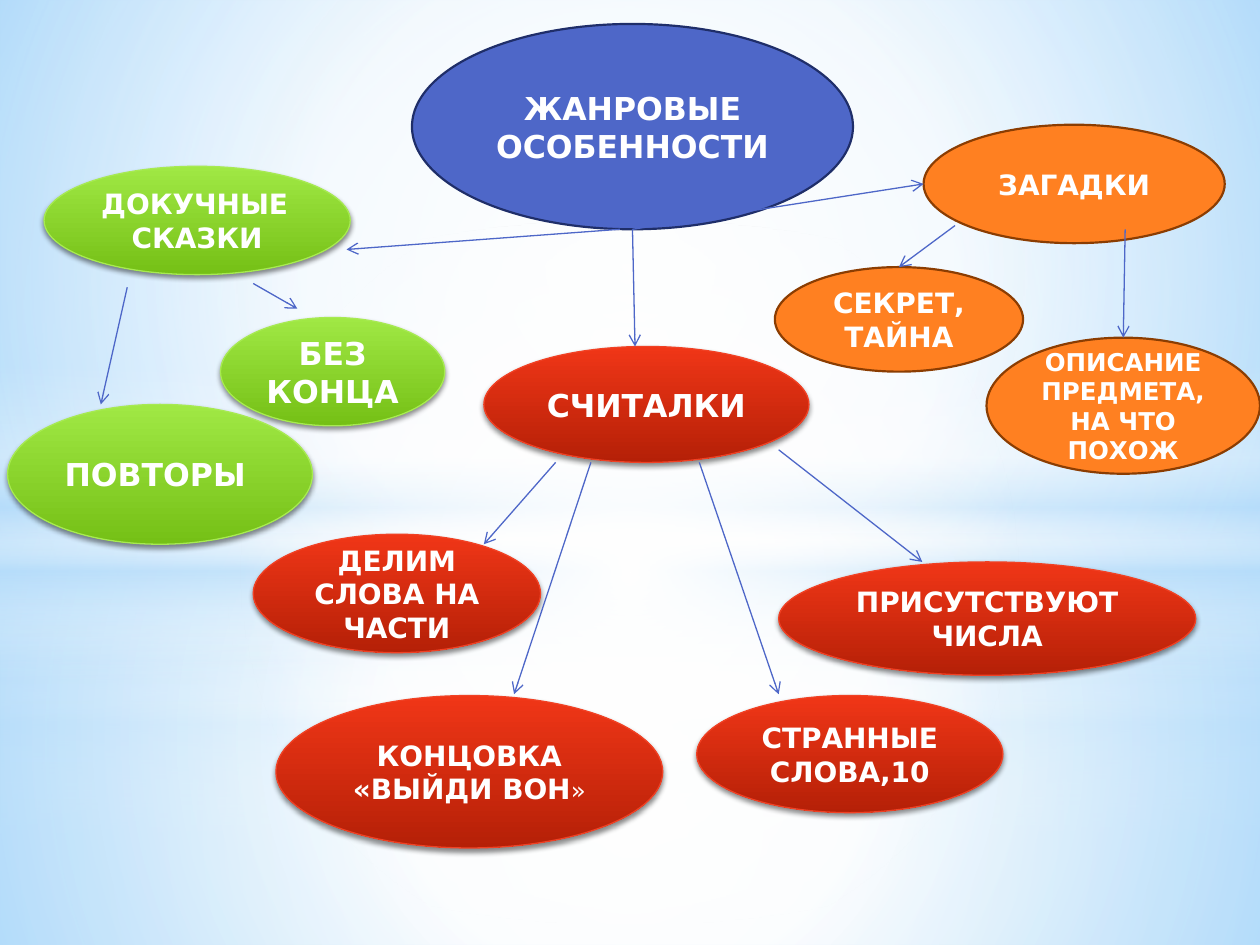
from lxml import etree
from pptx import Presentation
from pptx.dml.color import RGBColor
from pptx.enum.shapes import MSO_CONNECTOR as Conn, MSO_SHAPE as Geo
from pptx.enum.text import MSO_ANCHOR as Anchor, PP_ALIGN as Align
from pptx.oxml.ns import qn
from pptx.util import Inches, Pt

FONT = "DejaVu Sans"
BLUE, SKY, WHITE = "4E67C8", "B4DCFA", "FFFFFF"
LOOK = {
    "blue": (BLUE, "1F2E69"),
    "orange": ("FF8021", "8B3D02"),
    "red": (("F03617", "B52007"), "F14124"),
    "green": (("A0E844", "75C016"), "A7EA52"),
}


def color(code):
    """Turn a hex string into a colour."""
    return RGBColor.from_string(code)


def add(root, tag, **attrs):
    """Add a drawing element with its attributes."""
    return etree.SubElement(root, qn("a:" + tag), {k: str(v) for k, v in attrs.items()})


def blend(shape, stops, round_=False):
    """Fill a shape with (place, colour, opacity) stops, round or downward."""
    shape.fill.background()
    old = shape.element.spPr.find(qn("a:noFill"))
    grad = etree.Element(qn("a:gradFill"), rotWithShape="1")
    items = add(grad, "gsLst")
    for place, code, alpha in stops:
        tone = add(add(items, "gs", pos=place * 1000), "srgbClr", val=code)
        if alpha < 100:
            add(tone, "alpha", val=alpha * 1000)
    if round_:
        add(add(grad, "path", path="circle"), "fillToRect", l=50000, t=50000, r=50000, b=50000)
    else:
        add(grad, "lin", ang=5400000, scaled=0)
    old.getparent().replace(old, grad)


def shade(shape):
    """Give a shape a soft shadow below it."""
    effects = shape.element.spPr.find(qn("a:effectLst"))
    outer = add(effects, "outerShdw", blurRad=Pt(3.1), dist=Pt(1.8), dir=5400000,
                algn="ctr", rotWithShape=0)
    add(add(outer, "srgbClr", val="000000"), "alpha", val=45000)


def form(slide, geo, box):
    """Add a shape that has no shadow of its own."""
    shape = slide.shapes.add_shape(geo, *map(Inches, box))
    shape.shadow.inherit = False
    return shape


def scene(slide):
    """Draw the pale sky behind the chart."""
    slide.background.fill.solid()
    slide.background.fill.fore_color.rgb = color(SKY)
    band = [(0, WHITE, 0), (29, WHITE, 30), (45, SKY, 40),
            (55, WHITE, 26), (65, SKY, 60), (100, WHITE, 0)]
    layers = [
        (5.58, 4.12, (91, 76, 79), (89, 62, 79), 56),
        (4.23, 2.9, (92, 77, 80), (90, 63, 80), 54),
    ]
    for split, top, low, high, edge in layers:
        parts = [
            (Geo.RECTANGLE, split, 7.5 - split, list(zip((0, 37, 100), (WHITE, WHITE, SKY), low)), True),
            (Geo.RECTANGLE, 0, split, list(zip((0, 48, 100), (WHITE, WHITE, SKY), high)), True),
            (Geo.RECTANGLE, top, 2.5, band, False),
            (Geo.OVAL, 1.75, 5.58, [(0, WHITE, 100), (edge, WHITE, 0)], True),
        ]
        for geo, y, tall, stops, round_ in parts:
            shape = form(slide, geo, (0, y, 10, tall))
            blend(shape, stops, round_)
            shape.line.fill.background()


def write(para, text, size, bold=True):
    """Add one run of white text."""
    run = para.add_run()
    run.text = text
    font = run.font
    font.name, font.size, font.bold = FONT, Pt(size), bold
    font.color.rgb = color(WHITE)


def node(slide, box, look, size, *lines):
    """Add an oval whose lines are (text, alignment) pairs or centred text."""
    shape = form(slide, Geo.OVAL, box)
    fill, edge = LOOK[look]
    glossy = isinstance(fill, tuple)
    if glossy:
        blend(shape, [(0, fill[0], 100), (100, fill[1], 100)])
        shade(shape)
    else:
        shape.fill.solid()
        shape.fill.fore_color.rgb = color(fill)
    shape.line.color.rgb = color(edge)
    shape.line.width = Pt(0.75 if glossy else 1.25)
    frame = shape.text_frame
    frame.word_wrap = True
    frame.vertical_anchor = Anchor.MIDDLE
    for i, line in enumerate(lines):
        text, align = line if isinstance(line, tuple) else (line, Align.CENTER)
        para = frame.add_paragraph() if i else frame.paragraphs[0]
        para.alignment = align
        write(para, text, size)
    return shape


def link(slide, start, end, goal=None):
    """Draw an arrow, joined to the top of its goal if one is given."""
    line = slide.shapes.add_connector(Conn.STRAIGHT, *map(Inches, (*start, *end)))
    line.line.color.rgb = color(BLUE)
    line.line.width = Pt(0.75)
    add(line.line._get_or_add_ln(), "tailEnd", type="arrow")
    add(line._element.spPr, "effectLst")
    if goal is not None:
        line.end_connect(goal, 0)


def tales(slide, x, y):
    """Place the green branch."""
    node(slide, (x + 1.69, y + 1.2, 1.78, 0.86), "green", 18, "БЕЗ КОНЦА")
    node(slide, (x + 0.29, y, 2.43, 0.86), "green", 16, ("ДОКУЧНЫЕ", Align.LEFT), "СКАЗКИ")
    node(slide, (x, y + 1.89, 2.42, 1.11), "green", 18, ("ПОВТОРЫ", Align.LEFT))
    link(slide, (x + 0.95, y + 0.96), (x + 0.74, y + 1.89))
    link(slide, (x + 1.95, y + 0.93), (x + 2.3, y + 1.13))


def riddles(slide, x, y):
    """Place the orange branch."""
    node(slide, (x + 1.18, y, 2.39, 0.94), "orange", 16, "ЗАГАДКИ")
    look = node(slide, (x + 1.68, y + 1.69, 2.17, 1.08), "orange", 14,
                "ОПИСАНИЕ ПРЕДМЕТА, НА ЧТО ПОХОЖ")
    secret = node(slide, (x, y + 1.13, 1.97, 0.83), "orange", 16, "СЕКРЕТ, ТАЙНА")
    link(slide, (x + 2.78, y + 0.83), (x + 2.77, y + 1.69), look)
    link(slide, (x + 1.43, y + 0.8), (x + 0.99, y + 1.13), secret)


def rhymes(slide, x, y):
    """Place the red branch."""
    node(slide, (x + 1.83, y, 2.58, 0.92), "red", 18, "СЧИТАЛКИ")
    ending = node(slide, (x + 0.18, y + 2.77, 3.07, 1.21), "red", 16, "КОНЦОВКА «ВЫЙДИ ВОН")
    write(ending.text_frame.paragraphs[0], "»", 14, False)
    node(slide, (x + 3.52, y + 2.77, 2.43, 0.93), "red", 16, "СТРАННЫЕ СЛОВА,10")
    node(slide, (x + 4.17, y + 1.71, 3.31, 0.9), "red", 16, "ПРИСУТСТВУЮТ ЧИСЛА")
    node(slide, (x, y + 1.49, 2.28, 0.94), "red", 16, "ДЕЛИМ СЛОВА НА ЧАСТИ")
    for a, b, c, d in [(2.4, 0.92, 1.83, 1.57), (2.68, 0.92, 2.07, 2.76),
                       (3.54, 0.92, 4.17, 2.76), (4.17, 0.82, 5.31, 1.71)]:
        link(slide, (x + a, y + b), (x + c, y + d))


def topic(slide, x, y):
    """Place the main oval and its arrows to the branches."""
    node(slide, (x, y, 3.5, 1.63), "blue", 18, "ЖАНРОВЫЕ ОСОБЕННОСТИ")
    for a, c, d in [(1.75, 1.77, 2.56), (1.65, -0.52, 1.79), (1.75, 4.06, 1.27)]:
        link(slide, (x + a, y + 1.63), (x + c, y + d))


def main():
    """Build and save the slide."""
    deck = Presentation()
    deck.slide_width, deck.slide_height = Inches(10), Inches(7.5)
    slide = deck.slides.add_slide(deck.slide_layouts[6])
    scene(slide)
    tales(slide, 0.06, 1.32)
    riddles(slide, 6.15, 0.99)
    rhymes(slide, 2.01, 2.75)
    topic(slide, 3.27, 0.19)
    deck.save("out.pptx")


if __name__ == "__main__":
    main()
